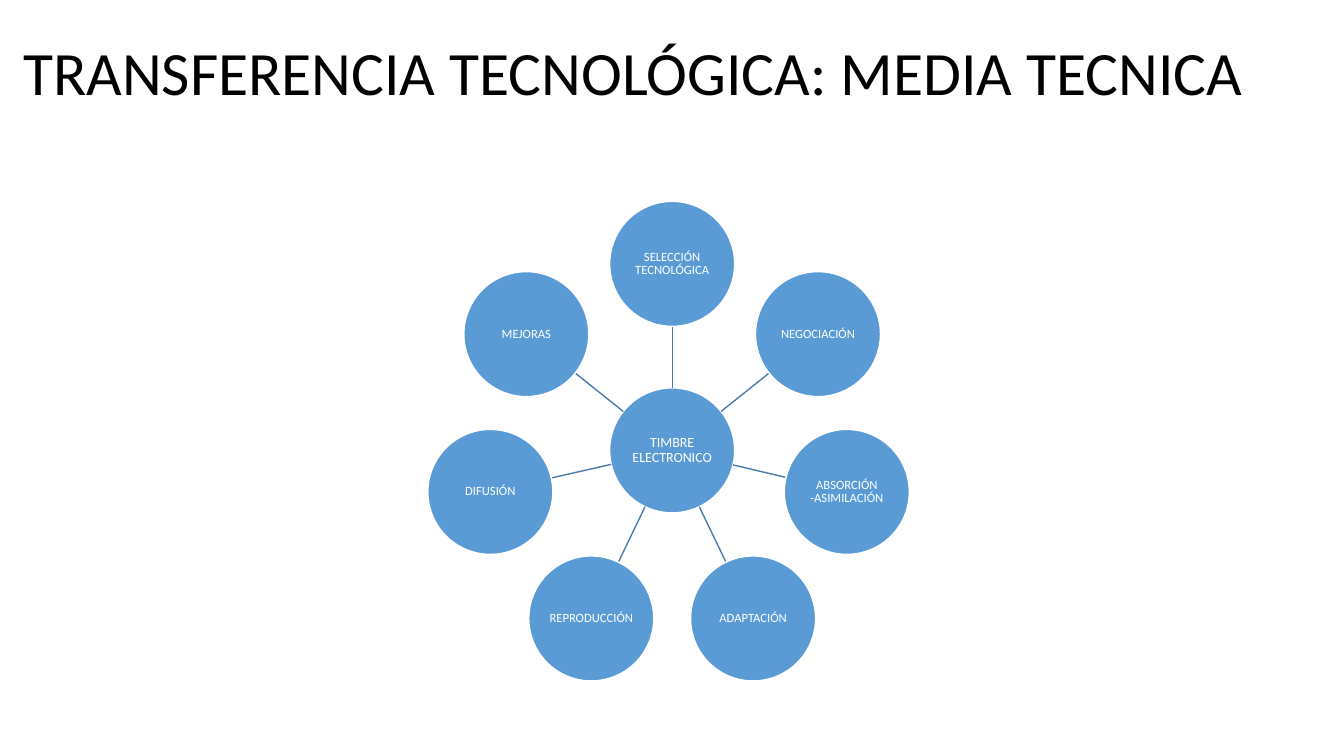
"""Build the slide on technology transfer: a hub joined to seven stages around it."""
from dataclasses import dataclass
from math import cos, hypot, pi, sin

from lxml.etree import SubElement
from pptx import Presentation
from pptx.dml.color import RGBColor
from pptx.enum.shapes import MSO_CONNECTOR as Connector, MSO_SHAPE as Shape
from pptx.enum.text import MSO_ANCHOR as Anchor, MSO_AUTO_SIZE as AutoSize, PP_ALIGN as Align
from pptx.oxml.ns import qn
from pptx.shapes.shapetree import GroupShapes
from pptx.slide import Slide
from pptx.text.text import TextFrame
from pptx.util import Cm, Pt

HUB_X, HUB_Y = 16.94, 11.35
ORBIT = 4.7
DIAMETER = 3.15
RADIUS = DIAMETER / 2


@dataclass(frozen=True)
class Stage:
    label: str
    shift_x: float = 0


STAGES = [
    Stage("SELECCIÓN TECNOLÓGICA"),
    Stage("NEGOCIACIÓN"),
    Stage("ABSORCIÓN -ASIMILACIÓN", shift_x=-0.18),
    Stage("ADAPTACIÓN"),
    Stage("REPRODUCCIÓN"),
    Stage("DIFUSIÓN"),
    Stage("MEJORAS"),
]


def color(value: str) -> RGBColor:
    return RGBColor.from_string(value)


def write(frame: TextFrame, text: str, size: float, ink: str, align: Align, inset: float | None = None) -> None:
    frame.text = text
    frame_format = {"word_wrap": True, "auto_size": AutoSize.NONE, "vertical_anchor": Anchor.MIDDLE}
    if inset is not None:
        for side in ("left", "top", "right", "bottom"):
            frame_format[f"margin_{side}"] = Cm(inset)
    paragraph = frame.paragraphs[0]
    formats = [
        (frame, frame_format),
        (paragraph, {"alignment": align, "line_spacing": 0.9}),
        (paragraph.runs[0].font, {"name": "Calibri", "size": Pt(size)}),
    ]
    for target, values in formats:
        for attribute, value in values.items():
            setattr(target, attribute, value)
    paragraph.runs[0].font.color.rgb = color(ink)


def draw_circle(shapes: GroupShapes, label: str, x: float, y: float, size: float) -> None:
    circle = shapes.add_shape(Shape.OVAL, Cm(x - RADIUS), Cm(y - RADIUS), Cm(DIAMETER), Cm(DIAMETER))
    circle.shadow.inherit = False
    circle.fill.solid()
    circle.fill.fore_color.rgb = color("5B9BD5")
    circle.line.color.rgb = color("FFFFFF")
    circle.line.width = Pt(1)
    write(circle.text_frame, label, size, "FFFFFF", Align.CENTER, inset=0.03)


def draw_spoke(shapes: GroupShapes, x: float, y: float) -> None:
    distance = hypot(x - HUB_X, y - HUB_Y)
    across, down = (x - HUB_X) / distance * RADIUS, (y - HUB_Y) / distance * RADIUS
    spoke = shapes.add_connector(
        Connector.STRAIGHT, Cm(HUB_X + across), Cm(HUB_Y + down), Cm(x - across), Cm(y - down)
    )
    spoke.line.color.rgb = color("497CAB")
    spoke.line.width = Pt(1)
    SubElement(spoke._element.spPr, qn("a:effectLst"))


def draw_wheel(slide: Slide) -> None:
    wheel = slide.shapes.add_group_shape().shapes
    draw_circle(wheel, "TIMBRE ELECTRONICO", HUB_X, HUB_Y, 10)
    for position, stage in enumerate(STAGES):
        angle = 2 * pi * position / len(STAGES)
        x = HUB_X + ORBIT * sin(angle) + stage.shift_x
        y = HUB_Y - ORBIT * cos(angle)
        draw_spoke(wheel, x, y)
        draw_circle(wheel, stage.label, x, y, 9)


def main() -> None:
    deck = Presentation()
    deck.slide_width, deck.slide_height = Cm(33.87), Cm(19.05)
    slide = deck.slides.add_slide(deck.slide_layouts[5])
    heading = slide.shapes.title
    place = {"left": 0.33, "top": 0.51, "width": 32.54, "height": 2.79}
    for attribute, value in place.items():
        setattr(heading, attribute, Cm(value))
    write(heading.text_frame, "TRANSFERENCIA TECNOLÓGICA: MEDIA TECNICA", 44, "000000", Align.LEFT)
    draw_wheel(slide)
    deck.save("out.pptx")


if __name__ == "__main__":
    main()
